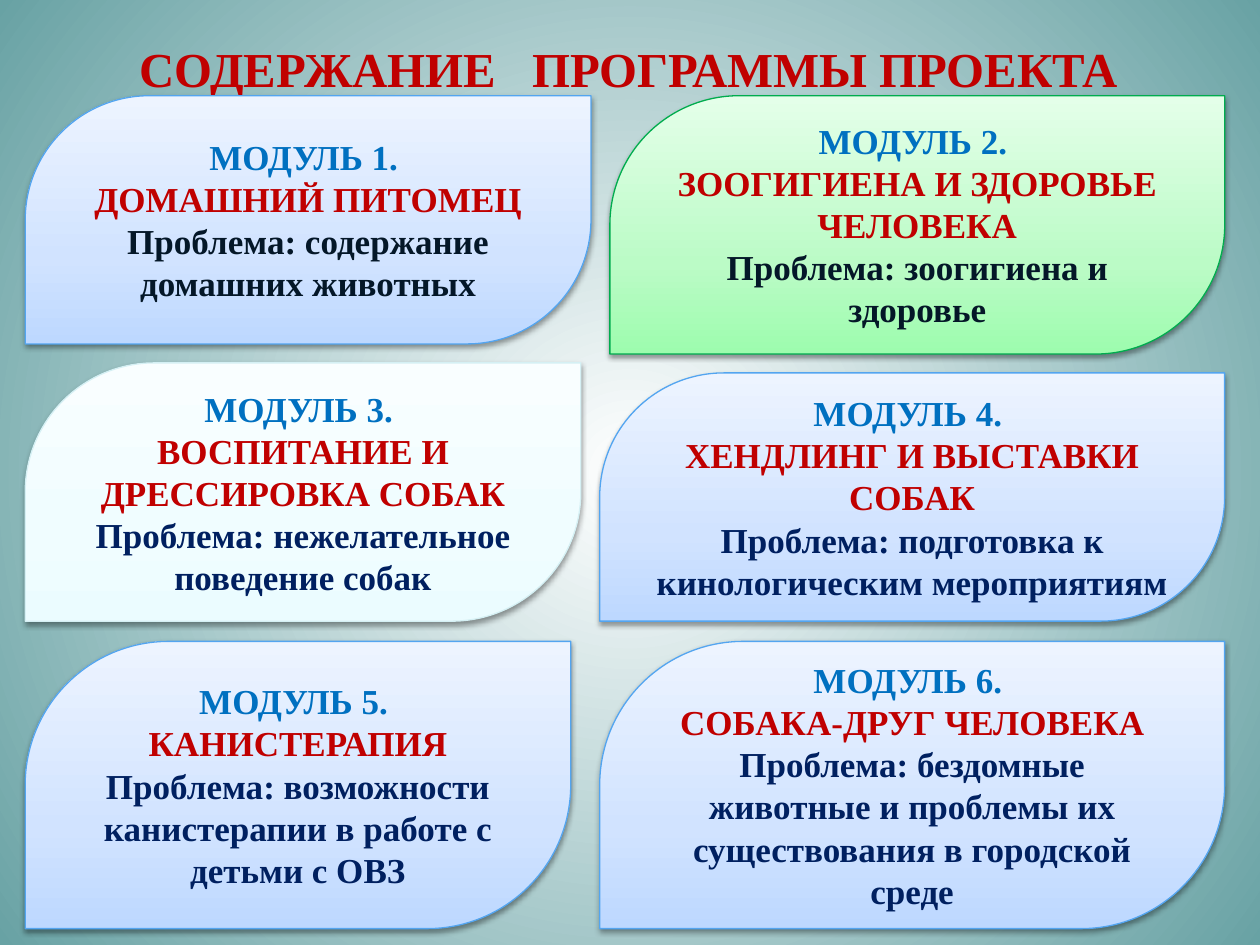
"""Builds a slide with six programme modules on leaf-shaped cards."""
from dataclasses import dataclass

from lxml.etree import SubElement
from pptx import Presentation
from pptx.dml.color import RGBColor
from pptx.enum.shapes import MSO_SHAPE
from pptx.enum.text import MSO_ANCHOR, PP_ALIGN
from pptx.oxml.ns import qn
from pptx.util import Inches, Pt


@dataclass(frozen=True)
class Theme:
    font: str = "Times New Roman"
    title_size: float = 27.9
    body_size: float = 20
    word_gap: float = 14
    red: str = "C00000"
    blue: str = "0070C0"
    ink: str = "041728"
    navy: str = "002060"
    shadow: str = "000000"
    background: tuple = ((0, "FFFFFF"), (100, "68A2A4"))
    sky: tuple = ((0, "BDD8FF"), (35, "D1E3FF"), (100, "EDF4FF"))
    sky_line: str = "53A5F0"
    green: tuple = ((0, "9DFCAE"), (35, "BBFBC6"), (100, "E4FFE9"))
    green_line: str = "00AC4E"
    ice: tuple = ((0, "EBFCFF"), (35, "F0FDFF"), (100, "F9FEFF"))
    ice_line: str = "D5F0F4"


class Deck:
    def __init__(self, theme, slide):
        self.theme = theme
        self.s = slide

    def gradient(self, fill, root, stops, radial=False):
        fill.gradient()
        grad = next(root.iter(qn("a:gradFill")))
        for child in list(grad):
            grad.remove(child)
        stop_list = SubElement(grad, qn("a:gsLst"))
        for pos, color in stops:
            stop = SubElement(stop_list, qn("a:gs"), pos=str(pos * 1000))
            SubElement(stop, qn("a:srgbClr"), val=color)
        if radial:
            shade = SubElement(grad, qn("a:path"), path="circle")
            center = {side: "50000" for side in "ltrb"}
            SubElement(shade, qn("a:fillToRect"), **center)
        else:
            SubElement(grad, qn("a:lin"), ang="16200000", scaled="1")

    def background(self):
        self.gradient(self.s.background.fill, self.s._element,
                      self.theme.background, radial=True)

    def shadow(self, sp):
        sp.shadow.inherit = False
        effects = sp._element.spPr.find(qn("a:effectLst"))
        outer = SubElement(effects, qn("a:outerShdw"), blurRad="40000",
                           dist="20000", dir="5400000", rotWithShape="0")
        color = SubElement(outer, qn("a:srgbClr"), val=self.theme.shadow)
        SubElement(color, qn("a:alpha"), val="38000")

    def run(self, p, text, size, color):
        p.alignment = PP_ALIGN.CENTER
        r = p.add_run()
        r.text = text
        r.font.name = self.theme.font
        r.font.size = Pt(size)
        r.font.bold = True
        r.font.color.rgb = RGBColor.from_string(color)
        return r

    def title(self, first, rest, left, top, width, height):
        sp = self.s.shapes.add_textbox(Inches(left), Inches(top),
                                       Inches(width), Inches(height))
        tf = sp.text_frame
        tf.word_wrap = True
        tf.margin_top = Inches(0.1)
        p = tf.paragraphs[0]
        for text in (first, " ", rest):
            r = self.run(p, text, self.theme.title_size, self.theme.red)
            if text == " ":
                spacing = str(int(self.theme.word_gap * 100))
                r._r.get_or_add_rPr().set("spc", spacing)

    def card(self, box, stops, line, lines):
        sp = self.s.shapes.add_shape(MSO_SHAPE.ROUND_2_DIAG_RECTANGLE,
                                     *map(Inches, box))
        sp.adjustments[0] = 0.5
        sp.adjustments[1] = 0
        self.gradient(sp.fill, sp._element.spPr, stops)
        sp.line.color.rgb = RGBColor.from_string(line)
        sp.line.width = Pt(0.75)
        self.shadow(sp)
        tf = sp.text_frame
        tf.word_wrap = True
        tf.vertical_anchor = MSO_ANCHOR.MIDDLE
        for i, (text, color) in enumerate(lines):
            p = tf.add_paragraph() if i else tf.paragraphs[0]
            self.run(p, text, self.theme.body_size, color)


def main():
    prs = Presentation()
    prs.slide_width, prs.slide_height = Inches(10), Inches(7.5)
    theme = Theme()
    deck = Deck(theme, prs.slides.add_slide(prs.slide_layouts[6]))
    deck.background()
    deck.title("СОДЕРЖАНИЕ", "ПРОГРАММЫ ПРОЕКТА", 0.49, 0.21, 9, 1.25)

    sky = (theme.sky, theme.sky_line)
    green = (theme.green, theme.green_line)
    ice = (theme.ice, theme.ice_line)
    modules = [
        ((0.2, 0.76, 4.49, 1.97), sky, theme.ink, "ДОМАШНИЙ ПИТОМЕЦ",
         "содержание домашних животных"),
        ((4.84, 0.76, 4.88, 2.05), green, theme.ink,
         "ЗООГИГИЕНА И ЗДОРОВЬЕ ЧЕЛОВЕКА", "зоогигиена и здоровье"),
        ((0.2, 2.88, 4.41, 2.05), ice, theme.navy,
         "ВОСПИТАНИЕ И ДРЕССИРОВКА СОБАК",
         "нежелательное поведение собак"),
        ((4.76, 2.96, 4.96, 1.97), sky, theme.navy,
         "ХЕНДЛИНГ И ВЫСТАВКИ СОБАК",
         "подготовка к кинологическим мероприятиям"),
        ((0.2, 5.09, 4.33, 2.28), sky, theme.navy, "КАНИСТЕРАПИЯ",
         "возможности канистерапии в работе с детьми с ОВЗ"),
        ((4.76, 5.09, 4.96, 2.28), sky, theme.navy, "СОБАКА-ДРУГ ЧЕЛОВЕКА",
         "бездомные животные и проблемы их существования в городской среде"),
    ]
    for number, (box, style, color, name, problem) in enumerate(modules, 1):
        deck.card(box, *style, [
            (f"МОДУЛЬ {number}. ", theme.blue),
            (name, theme.red),
            (f"Проблема: {problem}", color),
        ])
    prs.save("out.pptx")


if __name__ == "__main__":
    main()
